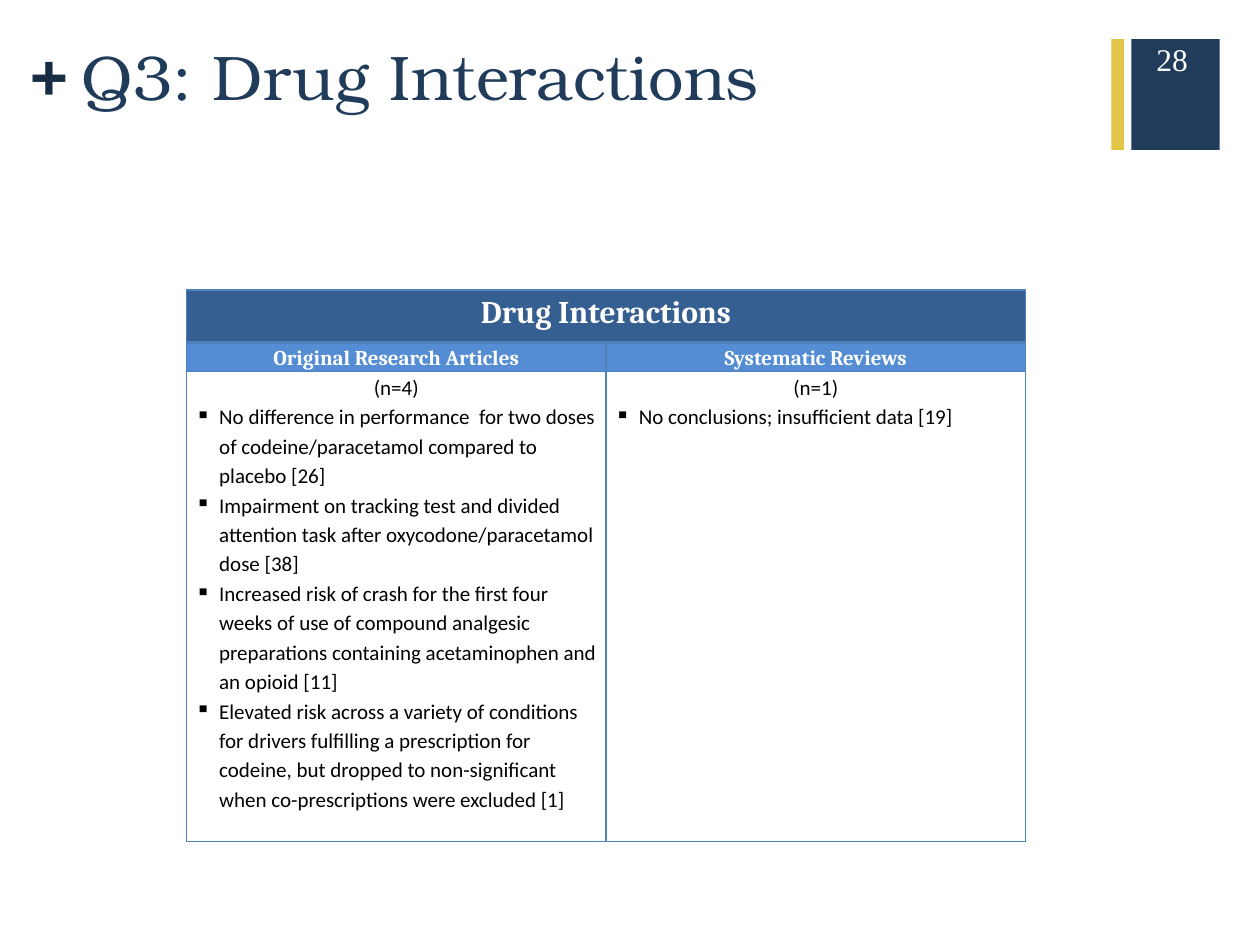
from lxml import etree
from pptx import Presentation
from pptx import util as u
from pptx.dml.color import RGBColor
from pptx.enum import shapes, text
from pptx.oxml import ns

NAVY = RGBColor(0x20, 0x3C, 0x5A)
DARK = RGBColor(0x18, 0x2D, 0x44)
GOLD = RGBColor(0xE2, 0xC4, 0x46)
HEAD = RGBColor(0x36, 0x5F, 0x91)
SUB = RGBColor(0x54, 0x8D, 0xD4)
EDGE = RGBColor(0x4F, 0x81, 0xBD)
WHITE = RGBColor(255, 255, 255)
BLACK = RGBColor(0, 0, 0)
CENTER = text.PP_ALIGN.CENTER
INDENT = u.Inches(0.19)


class Deck:
    serif = "TeX Gyre Bonum"

    def __init__(self):
        self.prs = Presentation()
        self.prs.slide_width = u.Inches(10)
        self.prs.slide_height = u.Inches(7.5)
        self.slide = self.prs.slides.add_slide(self.prs.slide_layouts[5])

    def style(self, para, face, size, color, bold=False):
        for run in para.runs:
            run.font.name = face
            run.font.size = u.Pt(size)
            run.font.color.rgb = color
            run.font.bold = bold

    def title(self, words, *box):
        shape = self.slide.shapes.title
        shape.left, shape.top, shape.width, shape.height = map(u.Inches, box)
        frame = shape.text_frame
        frame.text = words
        frame.vertical_anchor = text.MSO_ANCHOR.MIDDLE
        para = frame.paragraphs[0]
        para.alignment = text.PP_ALIGN.LEFT
        self.style(para, self.serif, 36, NAVY)

    def block(self, color, *box):
        shape = self.slide.shapes.add_shape(
            shapes.MSO_SHAPE.RECTANGLE, *map(u.Inches, box))
        shape.shadow.inherit = False
        shape.fill.solid()
        shape.fill.fore_color.rgb = color
        shape.line.fill.background()

    def label(self, words, face, size, color, *box, bold=False, inset=True):
        frame = self.slide.shapes.add_textbox(*map(u.Inches, box)).text_frame
        frame.word_wrap = True
        if not inset:
            frame.margin_left = frame.margin_right = 0
            frame.margin_top = frame.margin_bottom = 0
        frame.text = words
        self.style(frame.paragraphs[0], face, size, color, bold)

    def table(self, left, top, widths, heights):
        grid = self.slide.shapes.add_table(
            len(heights), len(widths), u.Inches(left), u.Inches(top),
            u.Inches(sum(widths)), u.Inches(sum(heights))).table
        grid.first_row = grid.horz_banding = False
        for col, width in zip(grid.columns, widths):
            col.width = u.Inches(width)
        for row, height in zip(grid.rows, heights):
            row.height = u.Inches(height)
        return grid

    def border(self, cell, **widths):
        """Draw all four cell edges, 1 pt unless a side (L, R, T, B) is given."""
        props = cell._tc.get_or_add_tcPr()
        for side in "LRTB":
            line = etree.SubElement(props, ns.qn(f"a:ln{side}"),
                                    w=str(u.Pt(widths.get(side, 1))))
            fill = etree.SubElement(line, ns.qn("a:solidFill"))
            etree.SubElement(fill, ns.qn("a:srgbClr"), val=str(EDGE))

    def cell(self, cell, lines, face, size, color, fill=None, bold=False, **edges):
        """Fill a cell with a centred first line and bulleted lines after it."""
        self.border(cell, **edges)
        if fill is None:
            cell.fill.background()
        else:
            cell.fill.solid()
            cell.fill.fore_color.rgb = fill
        cell.margin_left = cell.margin_right = u.Inches(0.07)
        cell.margin_top = cell.margin_bottom = 0
        frame = cell.text_frame
        frame.text = "\n".join(lines)
        for i, para in enumerate(frame.paragraphs):
            para.line_spacing = 1.15
            if i == 0:
                para.alignment = CENTER
            else:
                self.bullet(para)
            self.style(para, face, size, color, bold)

    def bullet(self, para):
        props = para._p.get_or_add_pPr()
        props.set("marL", str(INDENT))
        props.set("indent", str(-INDENT))
        etree.SubElement(props, ns.qn("a:buChar"), char="▪")


def main():
    deck = Deck()
    deck.block(NAVY, 8.98, 0.31, 0.7, 0.88)
    deck.block(GOLD, 8.82, 0.31, 0.1, 0.88)
    deck.label("+", deck.serif, 36, DARK, 0.24, 0.25, 0.28, 0.61,
               bold=True, inset=False)
    deck.title("Q3: Drug Interactions", 0.55, 0.27, 8.26, 0.65)
    deck.label("28", "Times New Roman", 18, WHITE, 9.08, 0.27, 0.61, 0.4)

    grid = deck.table(1.48, 2.3, [3.33, 3.33], [0.42, 0.22, 3.73])
    top = grid.cell(0, 0)
    top.merge(grid.cell(0, 1))
    deck.cell(top, ["Drug Interactions"], "Cambria", 18, WHITE, HEAD,
              bold=True, B=2.25)
    deck.border(grid.cell(0, 1), B=2.25)

    columns = [
        ("Original Research Articles", [
            "(n=4)",
            "No difference in performance  for two doses of "
            "codeine/paracetamol compared to placebo [26]",
            "Impairment on tracking test and divided attention task after "
            "oxycodone/paracetamol dose [38]",
            "Increased risk of crash for the first four weeks of use of compound "
            "analgesic preparations containing acetaminophen and an opioid [11]",
            "Elevated risk across a variety of conditions for drivers fulfilling "
            "a prescription for codeine, but dropped to non-significant when "
            "co-prescriptions were excluded [1]",
        ]),
        ("Systematic Reviews", [
            "(n=1)",
            "No conclusions; insufficient data [19]",
        ]),
    ]
    for col, (head, lines) in enumerate(columns):
        deck.cell(grid.cell(1, col), [head], "Cambria", 12, WHITE, SUB,
                  bold=True, T=2.25)
        deck.cell(grid.cell(2, col), lines, "Calibri", 12, BLACK)
    deck.prs.save("out.pptx")


if __name__ == "__main__":
    main()
